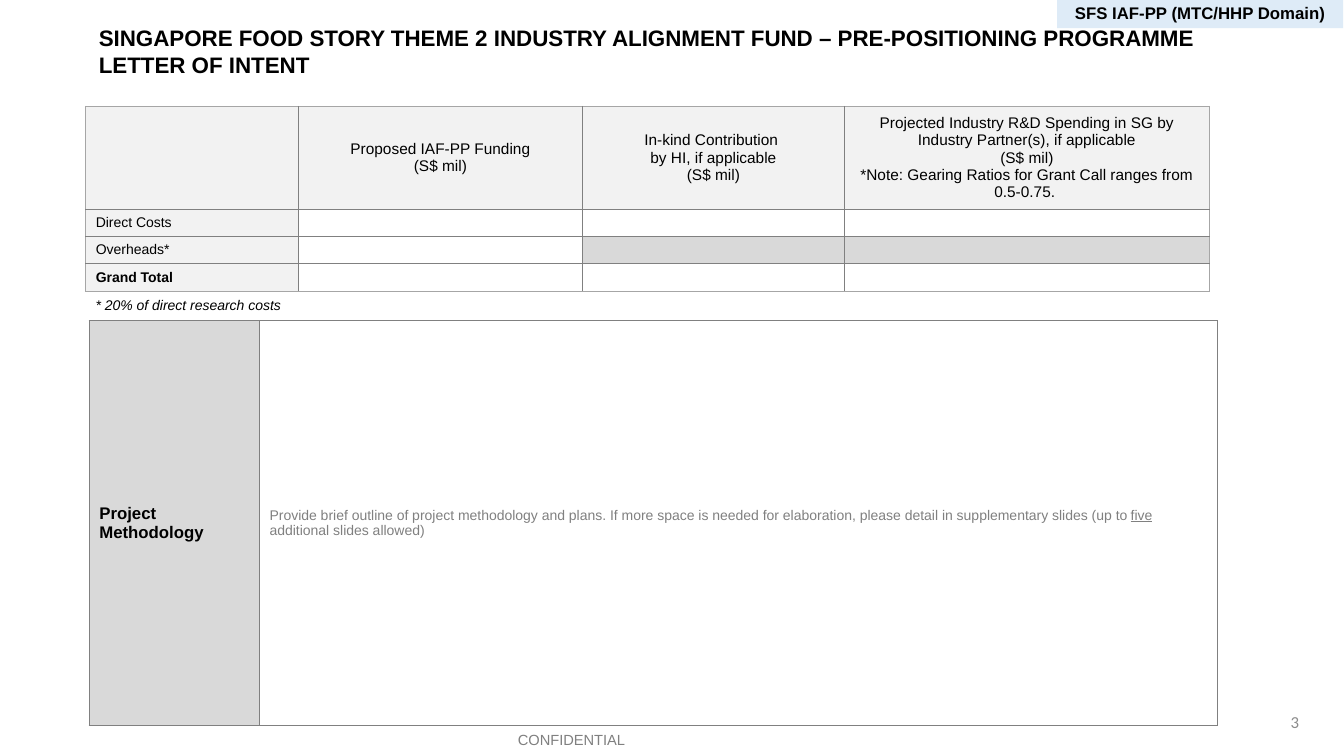
from dataclasses import dataclass

from lxml import etree
from pptx import Presentation
from pptx.dml.color import RGBColor
from pptx.enum.shapes import MSO_SHAPE
from pptx.enum.text import MSO_ANCHOR, MSO_AUTO_SIZE, PP_ALIGN
from pptx.oxml.ns import qn
from pptx.util import Cm, Pt

LEFT, CENTER, RIGHT = PP_ALIGN.LEFT, PP_ALIGN.CENTER, PP_ALIGN.RIGHT
TOP, MIDDLE = MSO_ANCHOR.TOP, MSO_ANCHOR.MIDDLE
GROW, FIXED = MSO_AUTO_SIZE.SHAPE_TO_FIT_TEXT, MSO_AUTO_SIZE.NONE
RECTANGLE = MSO_SHAPE.RECTANGLE

BLACK = RGBColor(0x00, 0x00, 0x00)
WHITE = RGBColor(0xFF, 0xFF, 0xFF)
GREY = RGBColor(0x80, 0x80, 0x80)
PAGE_GREY = RGBColor(0x8C, 0x8C, 0x8C)
EDGE_GREY = RGBColor(0xA6, 0xA6, 0xA6)
LABEL_GREY = RGBColor(0xF2, 0xF2, 0xF2)
BLOCKED_GREY = RGBColor(0xD9, 0xD9, 0xD9)
TAG_BLUE = RGBColor(0xDE, 0xEB, 0xF7)


@dataclass(frozen=True)
class Style:
    size: float
    color: RGBColor = BLACK
    bold: bool = False
    italic: bool = False
    align: PP_ALIGN = LEFT
    font: str = "Arial"


@dataclass(frozen=True)
class Label:
    text: str
    left: float
    top: float
    width: float
    height: float
    style: Style
    anchor: MSO_ANCHOR = TOP
    auto_size: MSO_AUTO_SIZE = FIXED
    wrap: bool = True
    fill: RGBColor | None = None


@dataclass(frozen=True)
class Cell:
    """A table cell; each inner tuple is a paragraph, its odd runs underlined."""
    paragraphs: tuple[tuple[str, ...], ...] = ()
    style: Style = Style(10)
    fill: RGBColor = WHITE


@dataclass(frozen=True)
class Grid:
    left: float
    top: float
    cols: tuple[float, ...]
    rows: tuple[float, ...]
    cells: tuple[tuple[Cell, ...], ...]
    edge: RGBColor = GREY


def format_paragraph(p, style: Style) -> None:
    p.alignment = style.align
    for r in p.runs:
        r.font.name = style.font
        r.font.size = Pt(style.size)
        r.font.color.rgb = style.color
        r.font.bold = style.bold
        r.font.italic = style.italic


def add_label(s, label: Label) -> None:
    box = [Cm(v) for v in (label.left, label.top, label.width, label.height)]
    if label.fill is None:
        sp = s.shapes.add_textbox(*box)
    else:
        sp = s.shapes.add_shape(RECTANGLE, *box)
        sp.shadow.inherit = False
        sp.fill.solid()
        sp.fill.fore_color.rgb = label.fill
        sp.line.fill.background()
    tf = sp.text_frame
    tf.word_wrap = label.wrap
    tf.auto_size = label.auto_size
    tf.vertical_anchor = label.anchor
    p = tf.paragraphs[0]
    p.text = label.text
    format_paragraph(p, label.style)


def add_border(cell, side: str, color: RGBColor) -> None:
    ln = etree.SubElement(cell._tc.get_or_add_tcPr(), qn(f"a:ln{side}"), w=str(Pt(1)))
    fill = etree.SubElement(ln, qn("a:solidFill"))
    etree.SubElement(fill, qn("a:srgbClr"), val=str(color))


def fill_cell(cell, content: Cell) -> None:
    cell.fill.solid()
    cell.fill.fore_color.rgb = content.fill
    cell.vertical_anchor = MIDDLE
    tf = cell.text_frame
    for i, runs in enumerate(content.paragraphs):
        p = tf.add_paragraph() if i else tf.paragraphs[0]
        for j, text in enumerate(runs):
            r = p.add_run()
            r.text = text
            if j % 2:
                r.font.underline = True
        format_paragraph(p, content.style)
    if not content.paragraphs:
        # Keeps the default 18 pt from stretching a low row
        etree.SubElement(tf.paragraphs[0]._p, qn("a:endParaRPr"),
                         sz=str(content.style.size * 100))


def add_grid(s, grid: Grid) -> None:
    n_rows, n_cols = len(grid.rows), len(grid.cols)
    table = s.shapes.add_table(n_rows, n_cols, Cm(grid.left), Cm(grid.top),
                               Cm(sum(grid.cols)), Cm(sum(grid.rows))).table
    table.first_row = table.horz_banding = False
    for column, width in zip(table.columns, grid.cols):
        column.width = Cm(width)
    for i, height in enumerate(grid.rows):
        table.rows[i].height = Cm(height)
        for j, content in enumerate(grid.cells[i]):
            cell = table.cell(i, j)
            outer = {"L": j == 0, "R": j == n_cols - 1,
                     "T": i == 0, "B": i == n_rows - 1}
            for side, on_edge in outer.items():
                add_border(cell, side, grid.edge if on_edge else GREY)
            fill_cell(cell, content)


def header(*lines: str) -> Cell:
    return Cell(tuple((line,) for line in lines), Style(11, align=CENTER), LABEL_GREY)


def row_label(text: str, bold: bool = False) -> Cell:
    return Cell(((text,),), Style(10, bold=bold), LABEL_GREY)


EMPTY = Cell()
BLOCKED = Cell(fill=BLOCKED_GREY)

METHODOLOGY = Grid(2.25, 8.08, (4.29, 24.14), (10.21,), ((
    Cell((("Project Methodology",),), Style(12, bold=True), BLOCKED_GREY),
    Cell((("Provide brief outline of project methodology and plans. If more space is "
           "needed for elaboration, please detail in supplementary slides (up to ",
           "five", " additional slides allowed)"),), Style(10, GREY)),
),))

BUDGET = Grid(2.16, 2.68, (5.36, 7.16, 6.6, 9.2), (2.59, 0.69, 0.69, 0.69), (
    (header(),
     header("Proposed IAF-PP Funding", "(S$ mil)"),
     header("In-kind Contribution ", "by HI, if applicable", "(S$ mil)"),
     header("Projected Industry R&D Spending in SG by Industry Partner(s), if applicable",
            "(S$ mil)",
            "*Note: Gearing Ratios for Grant Call ranges from 0.5-0.75. ")),
    (row_label("Direct Costs"), EMPTY, EMPTY, EMPTY),
    (row_label("Overheads*"), EMPTY, BLOCKED, BLOCKED),
    (row_label("Grand Total", bold=True), EMPTY, EMPTY, EMPTY),
), EDGE_GREY)

TITLE = Label("SINGAPORE FOOD STORY THEME 2 INDUSTRY ALIGNMENT FUND – "
              "PRE-POSITIONING PROGRAMME\nLETTER OF INTENT",
              2.24, 0.48, 28.68, 1.52, Style(16, bold=True))

NOTES = (
    Label("* 20% of direct research costs", 2.16, 7.34, 5.21, 0.69,
          Style(10, italic=True), auto_size=GROW, wrap=False),
    Label("CONFIDENTIAL", 12.5, 18.29, 3.81, 0.74,
          Style(10.5, GREY, align=CENTER), auto_size=GROW),
    Label("3", 25.37, 17.68, 7.62, 1.02,
          Style(12, PAGE_GREY, align=RIGHT, font="Calibri"), MIDDLE),
    Label("SFS IAF-PP (MTC/HHP Domain)", 26.64, -0.05, 7.21, 0.76,
          Style(12, bold=True, align=CENTER), auto_size=GROW, fill=TAG_BLUE),
)


def main() -> None:
    prs = Presentation()
    prs.slide_width, prs.slide_height = Cm(33.87), Cm(19.05)
    s = prs.slides.add_slide(prs.slide_layouts[6])
    add_grid(s, METHODOLOGY)
    add_label(s, TITLE)
    add_grid(s, BUDGET)
    for note in NOTES:
        add_label(s, note)
    prs.save("out.pptx")


if __name__ == "__main__":
    main()
